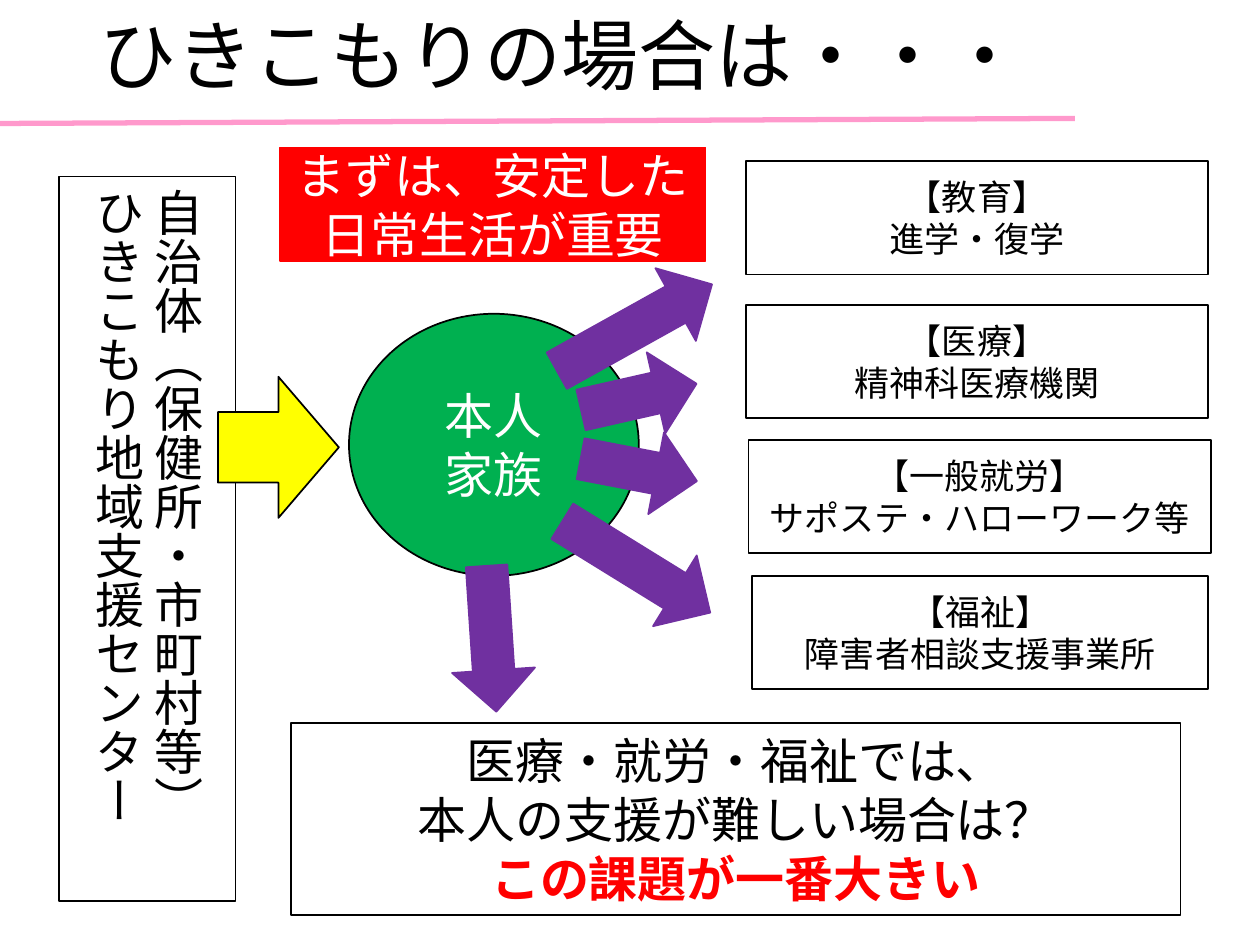
import dataclasses
import typing

import pptx
import pptx.dml.color
import pptx.enum.shapes
import pptx.enum.text
import pptx.oxml
import pptx.oxml.ns
import pptx.util

Inches = pptx.util.Inches
Pt = pptx.util.Pt
Shape = pptx.enum.shapes.MSO_SHAPE
Align = pptx.enum.text.PP_ALIGN


@dataclasses.dataclass(frozen=True)
class Theme:
    """Colours, fonts and type sizes of the slide."""

    black: str = "000000"
    white: str = "FFFFFF"
    red: str = "FF0000"
    pink: str = "FF99CC"
    green: str = "00B050"
    purple: str = "7030A0"
    yellow: str = "FFFF00"
    latin: str = "Cabin"
    japanese: str = "Noto Sans CJK JP"
    title: int = 44
    large: int = 28
    small: int = 20


THEME = Theme()


@dataclasses.dataclass(frozen=True)
class Block:
    """A filled shape with its lines of text."""

    left: float
    top: float
    width: float
    height: float
    lines: tuple[str, ...] = ()
    form: typing.Any = Shape.RECTANGLE
    fill: str = THEME.white
    border: str = THEME.black
    ink: str = THEME.black
    size: int = THEME.large
    font: str = THEME.latin
    align: typing.Any = Align.CENTER
    turn: float = 0


def rgb(value: str) -> pptx.dml.color.RGBColor:
    """Return the colour object of a hex value."""
    return pptx.dml.color.RGBColor.from_string(value)


def write_lines(frame: typing.Any, block: Block) -> None:
    """Write one paragraph for each line of the block."""
    frame.word_wrap = True
    frame.vertical_anchor = pptx.enum.text.MSO_ANCHOR.MIDDLE
    for index, line in enumerate(block.lines):
        paragraph = frame.add_paragraph() if index else frame.paragraphs[0]
        paragraph.text = line
        paragraph.alignment = block.align
        paragraph.font.name = block.font
        paragraph.font.size = Pt(block.size)
        paragraph.font.color.rgb = rgb(block.ink)


def draw_block(slide: typing.Any, block: Block) -> typing.Any:
    """Draw a block and return its shape."""
    shape = slide.shapes.add_shape(
        block.form,
        Inches(block.left),
        Inches(block.top),
        Inches(block.width),
        Inches(block.height),
    )
    shape.shadow.inherit = False
    shape.rotation = block.turn
    shape.fill.solid()
    shape.fill.fore_color.rgb = rgb(block.fill)
    shape.line.color.rgb = rgb(block.border)
    shape.line.width = Pt(1)
    write_lines(shape.text_frame, block)
    return shape


def draw_title(slide: typing.Any) -> None:
    """Draw the title and the rule below it."""
    rule = slide.shapes.add_connector(
        pptx.enum.shapes.MSO_CONNECTOR.STRAIGHT,
        Inches(0), Inches(0.98), Inches(8.53), Inches(0.94),
    )
    rule.line.color.rgb = rgb(THEME.pink)
    rule.line.width = Pt(3)
    properties = rule._element.spPr
    properties.append(pptx.oxml.parse_xml(
        f"<a:effectLst {pptx.oxml.ns.nsdecls('a')}/>"
    ))
    title = Block(0.69, 0, 7.84, 0.94, ("ひきこもりの場合は・・・",),
                  size=THEME.title, align=Align.LEFT)
    box = slide.shapes.add_textbox(
        Inches(title.left), Inches(title.top), Inches(title.width), Inches(title.height)
    )
    write_lines(box.text_frame, title)
    box.text_frame.paragraphs[0].line_spacing = 0.9


def service(left: float, top: float, width: float, field: str, place: str) -> Block:
    """Describe a box for one field of support."""
    return Block(left, top, width, 0.9, (f"【{field}】", place), size=THEME.small)


def path_arrow(left: float, top: float, length: float, turn: float) -> Block:
    """Describe an arrow leading away from the person and family."""
    return Block(left, top, length, 0.66, form=Shape.RIGHT_ARROW,
                 fill=THEME.purple, border=THEME.purple, turn=turn)


MUNICIPALITY = Block(
    0.47, 1.4, 1.4, 5.75,
    ("自治体（保健所・市町村等）", "ひきこもり地域支援センター"),
    font=THEME.japanese, align=Align.LEFT,
)
FAMILY = Block(2.77, 2.49, 2.3, 2.08, ("本人", "家族"), form=Shape.OVAL,
               fill=THEME.green, ink=THEME.white, font=THEME.japanese)
SUPPORT_ARROW = Block(1.73, 2.99, 0.96, 1.12, form=Shape.RIGHT_ARROW, fill=THEME.yellow)
FIRST_STEP = Block(2.22, 1.17, 3.38, 0.9, ("まずは、安定した", "日常生活が重要"),
                   fill=THEME.red, border=THEME.red, ink=THEME.white)
CHALLENGE = Block(
    2.31, 5.74, 7.06, 1.52,
    ("医療・就労・福祉では、", "本人の支援が難しい場合は？", "この課題が一番大きい"),
)
SERVICES = (
    service(5.92, 1.28, 3.67, "教育", "進学・復学"),
    service(5.92, 2.42, 3.67, "医療", "精神科医療機関"),
    service(5.94, 3.49, 3.67, "一般就労", "サポステ・ハローワーク等"),
    service(5.97, 4.57, 3.62, "福祉", "障害者相談支援事業所"),
)
PATHS = (
    path_arrow(4.6, 3.4, 0.94, 10.9),
    path_arrow(4.33, 2.27, 1.41, 330.9),
    path_arrow(4.36, 4.17, 1.38, 31.7),
    path_arrow(3.32, 4.74, 1.16, 86.2),
    path_arrow(4.6, 2.82, 0.94, 347.2),
)


def main() -> None:
    """Build the slide and save it."""
    presentation = pptx.Presentation()
    presentation.slide_width = Inches(10)
    presentation.slide_height = Inches(7.5)
    slide = presentation.slides.add_slide(presentation.slide_layouts[6])
    draw_title(slide)
    municipality = draw_block(slide, MUNICIPALITY)
    municipality.text_frame._txBody.bodyPr.set("vert", "eaVert")
    for block in (FAMILY, *PATHS, *SERVICES, SUPPORT_ARROW, FIRST_STEP):
        draw_block(slide, block)
    challenge = draw_block(slide, CHALLENGE)
    emphasis = challenge.text_frame.paragraphs[-1].font
    emphasis.bold = True
    emphasis.color.rgb = rgb(THEME.red)
    presentation.save("out.pptx")


if __name__ == "__main__":
    main()
